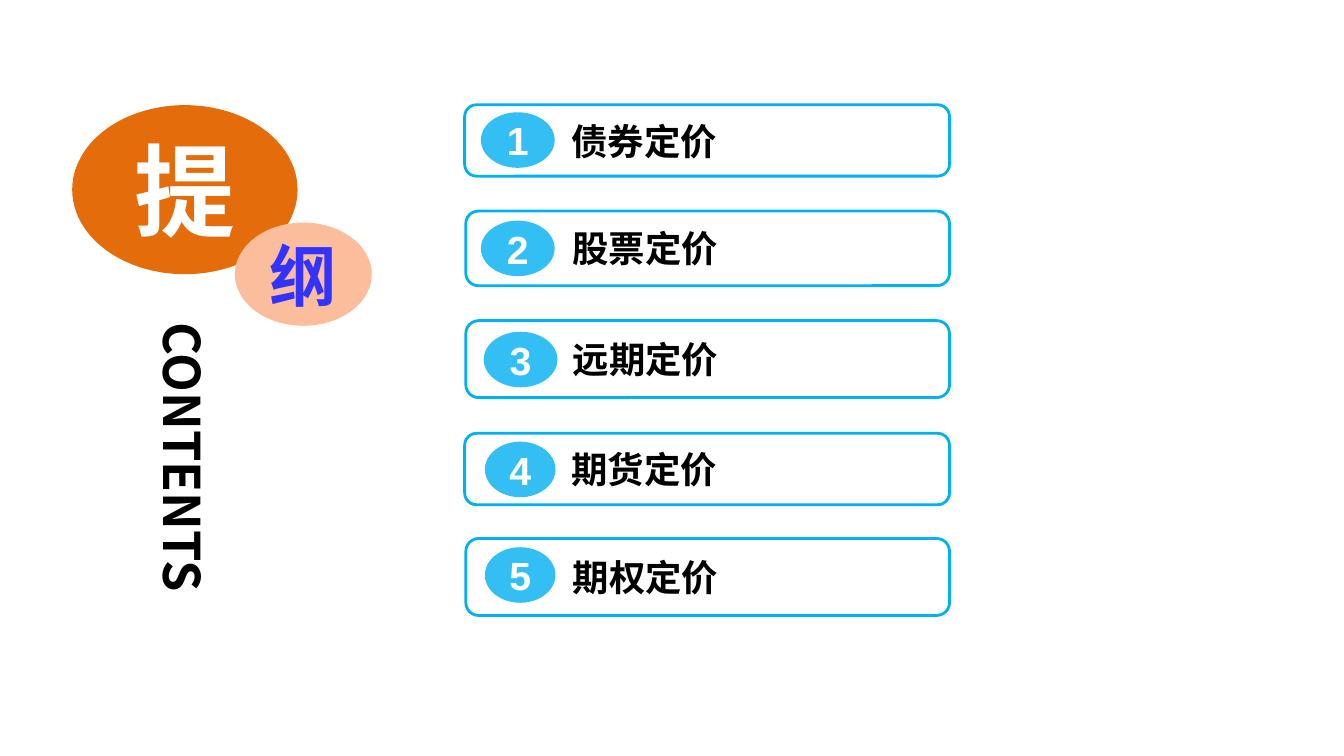
"""Build the outline slide: a two-circle heading and five numbered topics."""
from lxml import etree
from pptx import Presentation
from pptx.dml.color import RGBColor
from pptx.enum.shapes import MSO_SHAPE
from pptx.enum.text import MSO_ANCHOR, MSO_AUTO_SIZE, PP_ALIGN
from pptx.oxml.ns import qn
from pptx.util import Cm, Pt

OVAL = MSO_SHAPE.OVAL
ROUNDED = MSO_SHAPE.ROUNDED_RECTANGLE
MIDDLE = MSO_ANCHOR.MIDDLE
NO_AUTOFIT = MSO_AUTO_SIZE.NONE
LEFT, CENTER = PP_ALIGN.LEFT, PP_ALIGN.CENTER

TITLE_ONLY = 5
CJK_FONT = "Noto Sans CJK SC"
NUMBER_FONT = "Arial"
COLORS = {
    "white": "FFFFFF",
    "black": "000000",
    "sky": "00B0F0",
    "orange": "E46C0A",
    "peach": "FBBD9B",
    "blue": "3333FF",
}
# topic, bar (left, top, width, height), badge (left, top, width)
TOPICS = [
    ("债券定价", (11.71, 2.64, 12.22, 1.8), (12.12, 2.83, 1.86)),
    ("股票定价", (11.74, 5.32, 12.19, 1.88), (12.12, 5.56, 1.86)),
    ("远期定价", (11.74, 8.08, 12.19, 1.94), (12.19, 8.36, 1.86)),
    ("期货定价", (11.71, 10.92, 12.22, 1.8), (12.22, 11.13, 1.78)),
    ("期权定价", (11.74, 13.57, 12.19, 1.94), (12.22, 13.79, 1.78)),
]
BADGE_HEIGHT = 1.4
TOPIC_INDENT = 2.6


def color(name):
    """Return the named colour."""
    return RGBColor.from_string(COLORS[name])


def write(frame, text, size, ink, font=CJK_FONT, align=CENTER, margin=0.0):
    """Write one bold run, centred vertically, with a left margin in cm."""
    frame.auto_size = NO_AUTOFIT
    frame.vertical_anchor = MIDDLE
    frame.margin_left = Cm(margin)
    frame.margin_right = frame.margin_top = frame.margin_bottom = 0
    paragraph = frame.paragraphs[0]
    paragraph.alignment = align
    run = paragraph.add_run()
    run.text = text
    run.font.size = Pt(size)
    run.font.bold = True
    run.font.color.rgb = color(ink)
    run.font.name = font
    east_asian = etree.SubElement(run.font._element, qn("a:ea"))
    east_asian.set("typeface", font)


def add_filled(slide, kind, box, fill):
    """Add an unlined, shadowless shape; the box is in cm."""
    shape = slide.shapes.add_shape(kind, *map(Cm, box))
    shape.shadow.inherit = False
    shape.fill.solid()
    shape.fill.fore_color.rgb = color(fill)
    shape.line.fill.background()
    return shape


def add_heading_circle(slide, character, box, fill, ink, size):
    """Add one circle of the heading with its character."""
    circle = add_filled(slide, OVAL, box, fill)
    write(circle.text_frame, character, size, ink)


def add_vertical_title(slide, text):
    """Turn the title placeholder into the vertical heading."""
    title = slide.shapes.title
    title.left, title.top = Cm(3.51), Cm(8.13)
    title.width, title.height = Cm(2.26), Cm(7.62)
    write(title.text_frame, text, 36, "black", align=LEFT)
    title.text_frame._txBody.bodyPr.set("vert", "eaVert")


def add_topic_bar(slide, topic, box):
    """Add the outlined bar with its topic."""
    bar = add_filled(slide, ROUNDED, box, "white")
    bar.line.color.rgb = color("sky")
    bar.line.width = Pt(2)
    write(bar.text_frame, topic, 26, "black", align=LEFT, margin=TOPIC_INDENT)


def add_badge(slide, number, place):
    """Add the translucent number badge."""
    left, top, width = place
    badge = add_filled(slide, OVAL, (left, top, width, BADGE_HEIGHT), "sky")
    tint = badge.fill._xPr.find(qn("a:solidFill"))[0]
    etree.SubElement(tint, qn("a:alpha")).set("val", "80000")
    write(badge.text_frame, str(number), 28, "white", NUMBER_FONT)
    badge.text_frame.word_wrap = False


def main():
    """Build and save the slide."""
    deck = Presentation()
    deck.slide_width, deck.slide_height = Cm(33.87), Cm(19.05)
    slide = deck.slides.add_slide(deck.slide_layouts[TITLE_ONLY])
    add_vertical_title(slide, "CONTENTS")
    add_heading_circle(slide, "提", (1.82, 2.65, 5.68, 4.26), "orange", "white", 72)
    add_heading_circle(slide, "纲", (5.92, 5.61, 3.45, 2.6), "peach", "blue", 48)
    for number, (topic, bar, badge) in enumerate(TOPICS, start=1):
        add_topic_bar(slide, topic, bar)
        add_badge(slide, number, badge)
    deck.save("out.pptx")


if __name__ == "__main__":
    main()
